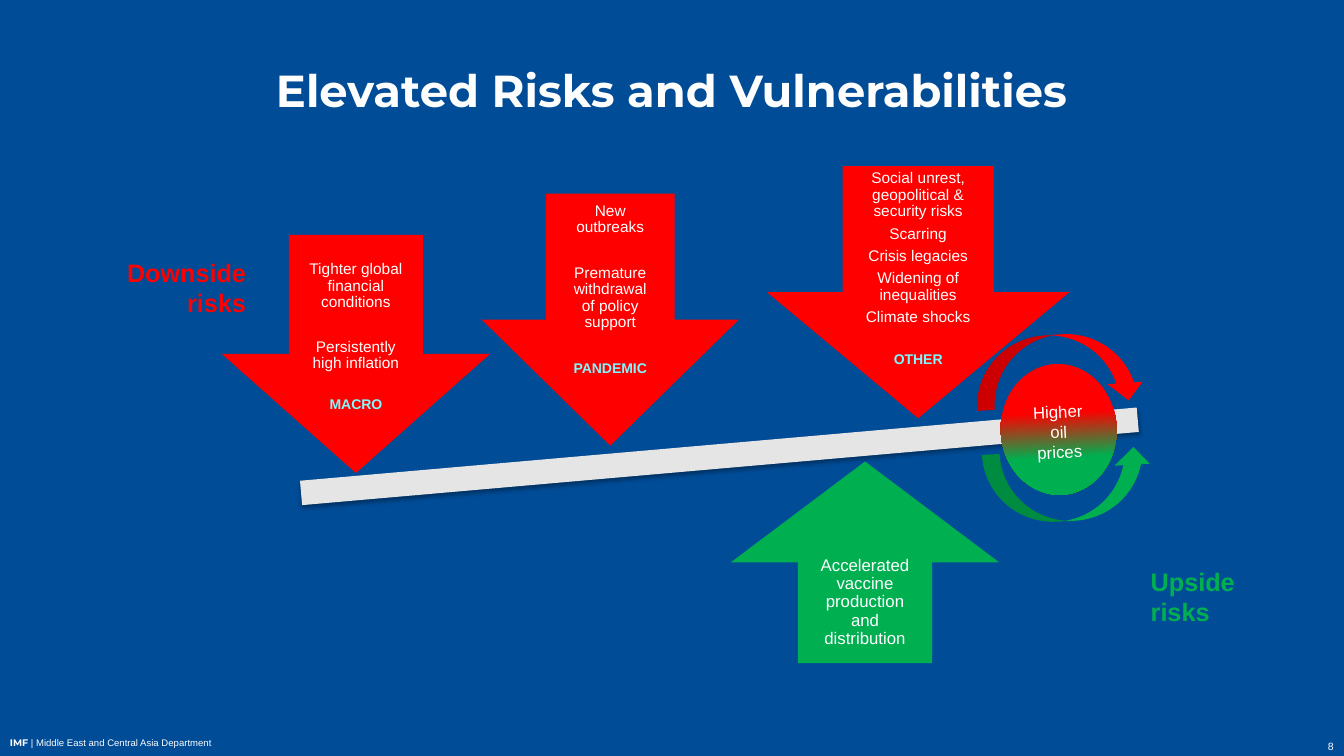
from dataclasses import dataclass

from lxml.etree import SubElement
from pptx import Presentation
from pptx.dml.color import RGBColor
from pptx.enum.shapes import MSO_SHAPE
from pptx.enum.text import MSO_ANCHOR, PP_ALIGN
from pptx.oxml import parse_xml
from pptx.oxml.ns import nsdecls, qn
from pptx.shapes.autoshape import Shape
from pptx.slide import Slide
from pptx.text.text import TextFrame, _Paragraph
from pptx.util import Cm, Pt

COLORS = {
    "background": "004C97",
    "text": "FEFEFE",
    "downside": "FF0000",
    "upside": "00B050",
    "category": "7DF9FF",
    "plank": "E5E5E5",
    "shadow": "000000",
}
ARROW_TEXT_MARGIN = 2.13


@dataclass(frozen=True)
class Box:
    left: float
    top: float
    width: float
    height: float


@dataclass(frozen=True)
class Line:
    text: str
    size: float
    color: str = "text"
    bold: bool = False
    gap: float = 0
    align: PP_ALIGN = PP_ALIGN.CENTER
    font: str = "Arial"
    spacing: float = 1.0


@dataclass(frozen=True)
class RiskArrow:
    box: Box
    kind: MSO_SHAPE
    color: str
    text_top: float
    lines: list[Line]


@dataclass(frozen=True)
class Label:
    box: Box
    line: Line
    anchor: MSO_ANCHOR = MSO_ANCHOR.TOP


def risk(text: str, gap: float = 0, size: float = 11) -> Line:
    return Line(text, size, gap=gap, spacing=0.9)


def category(text: str, gap: float) -> Line:
    return Line(text, 10, "category", True, gap, spacing=0.9)


RISK_ARROWS = [
    RiskArrow(Box(12.14, 4.88, 6.48, 6.35), MSO_SHAPE.DOWN_ARROW, "downside", 0.23, [
        risk("New outbreaks"),
        risk("Premature withdrawal of policy support", 20.5),
        category("PANDEMIC", 21.5),
    ]),
    RiskArrow(Box(18.42, 11.63, 6.76, 5.08), MSO_SHAPE.UP_ARROW, "upside", 1.14, [
        risk("Accelerated vaccine production and distribution", size=12),
    ]),
    RiskArrow(Box(5.59, 5.92, 6.76, 6), MSO_SHAPE.DOWN_ARROW, "downside", 0.66, [
        risk("Tighter global financial conditions"),
        risk("Persistently high inflation", 20),
        category("MACRO", 18),
    ]),
    RiskArrow(Box(19.33, 4.19, 7.62, 6.35), MSO_SHAPE.DOWN_ARROW, "downside", 0.1, [
        risk("Social unrest, geopolitical & security risks"),
        risk("Scarring", 4),
        risk("Crisis legacies", 4),
        risk("Widening of inequalities", 4),
        risk("Climate shocks", 4),
        category("OTHER", 18.8),
    ]),
]

LABELS = [
    Label(Box(3.48, 1.45, 26.9, 1.63),
          Line("Elevated Risks and Vulnerabilities", 32, bold=True, font="Montserrat")),
    Label(Box(2.72, 6.35, 3.73, 1.8),
          Line("Downside risks", 18, "downside", True, align=PP_ALIGN.RIGHT)),
    Label(Box(28.75, 14.15, 3.38, 1.8),
          Line("Upside risks", 18, "upside", True, align=PP_ALIGN.LEFT)),
    Label(Box(30.51, 18.52, 3.35, 0.58),
          Line("8", 7.5, align=PP_ALIGN.RIGHT), MSO_ANCHOR.BOTTOM),
]


def rgb(name: str) -> RGBColor:
    return RGBColor.from_string(COLORS[name])


def place(box: Box) -> tuple[Cm, Cm, Cm, Cm]:
    return Cm(box.left), Cm(box.top), Cm(box.width), Cm(box.height)


def write(frame: TextFrame, lines: list[Line], anchor: MSO_ANCHOR = MSO_ANCHOR.TOP) -> None:
    frame.word_wrap = True
    frame.vertical_anchor = anchor
    for index, line in enumerate(lines):
        paragraph: _Paragraph = frame.add_paragraph() if index else frame.paragraphs[0]
        paragraph.text = line.text
        paragraph.alignment = line.align
        paragraph.line_spacing = line.spacing
        paragraph.space_before = Pt(line.gap)
        paragraph.font.name = line.font
        paragraph.font.size = Pt(line.size)
        paragraph.font.bold = line.bold
        paragraph.font.color.rgb = rgb(line.color)


def draw_shape(slide: Slide, kind: MSO_SHAPE, box: Box, color: str, rotation: float = 0) -> Shape:
    shape = slide.shapes.add_shape(kind, *place(box))
    shape.rotation = rotation
    shape.shadow.inherit = False
    shape.fill.solid()
    shape.fill.fore_color.rgb = rgb(color)
    shape.line.fill.background()
    return shape


def draw_label(slide: Slide, label: Label) -> None:
    frame = slide.shapes.add_textbox(*place(label.box)).text_frame
    write(frame, [label.line], label.anchor)


def draw_risk_arrow(slide: Slide, arrow: RiskArrow) -> None:
    box = arrow.box
    shape = draw_shape(slide, arrow.kind, box, arrow.color)
    shape.adjustments[0] = 0.5
    shape.adjustments[1] = box.height / 2 / min(box.width, box.height)
    frame = shape.text_frame
    frame.margin_left = frame.margin_right = Cm(ARROW_TEXT_MARGIN - box.width / 4)
    frame.margin_top = Cm(arrow.text_top)
    frame.margin_bottom = 0
    write(frame, arrow.lines)


def draw_plank(slide: Slide) -> None:
    plank = draw_shape(slide, MSO_SHAPE.MATH_MINUS, Box(3.73, 10.19, 28.8, 2.62), "plank", 355)
    effects = plank.element.spPr.find(qn("a:effectLst"))
    shadow = SubElement(effects, qn("a:outerShdw"), blurRad=str(Pt(3.1)), dist=str(Pt(1.8)),
                        dir="5400000", rotWithShape="0")
    tint = SubElement(shadow, qn("a:srgbClr"), val=COLORS["shadow"])
    SubElement(tint, qn("a:alpha"), val="35000")


def draw_oil_prices(slide: Slide) -> None:
    draw_shape(slide, MSO_SHAPE.CURVED_DOWN_ARROW, Box(24.56, 8.43, 4.27, 1.78), "downside", 356)
    draw_shape(slide, MSO_SHAPE.CURVED_UP_ARROW, Box(24.79, 11.35, 4.27, 1.78), "upside", 357)
    oil = draw_shape(slide, MSO_SHAPE.OVAL, Box(25.22, 9.17, 2.92, 3.3), "downside", 357.2)
    stops = "".join(
        f'<a:gs pos="{percent * 1000}"><a:srgbClr val="{COLORS[color]}"/></a:gs>'
        for percent, color in [(0, "downside"), (38, "downside"), (70, "upside"), (100, "upside")]
    )
    properties = oil.element.spPr
    properties.replace(properties.find(qn("a:solidFill")), parse_xml(
        f'<a:gradFill {nsdecls("a")}><a:gsLst>{stops}</a:gsLst><a:lin ang="5400000"/></a:gradFill>'
    ))
    oil.text_frame.margin_top = Cm(0.46)
    write(oil.text_frame, [Line(word, 12) for word in ("Higher", "oil", "prices")])


def draw_footer(slide: Slide) -> None:
    frame = slide.shapes.add_textbox(*place(Box(0, 18.44, 25.4, 0.53))).text_frame
    write(frame, [Line("", 6.8, align=PP_ALIGN.LEFT)])
    for text, font, bold in [("IMF", "Montserrat", True),
                             (" | Middle East and Central Asia Department", "Arial", False)]:
        run = frame.paragraphs[0].add_run()
        run.text = text
        run.font.name = font
        run.font.bold = bold


def main() -> None:
    deck = Presentation()
    deck.slide_width, deck.slide_height = Cm(33.87), Cm(19.05)
    slide = deck.slides.add_slide(deck.slide_layouts[6])
    slide.background.fill.solid()
    slide.background.fill.fore_color.rgb = rgb("background")
    draw_footer(slide)
    draw_plank(slide)
    for arrow in RISK_ARROWS:
        draw_risk_arrow(slide, arrow)
    for label in LABELS:
        draw_label(slide, label)
    draw_oil_prices(slide)
    deck.save("out.pptx")


if __name__ == "__main__":
    main()
